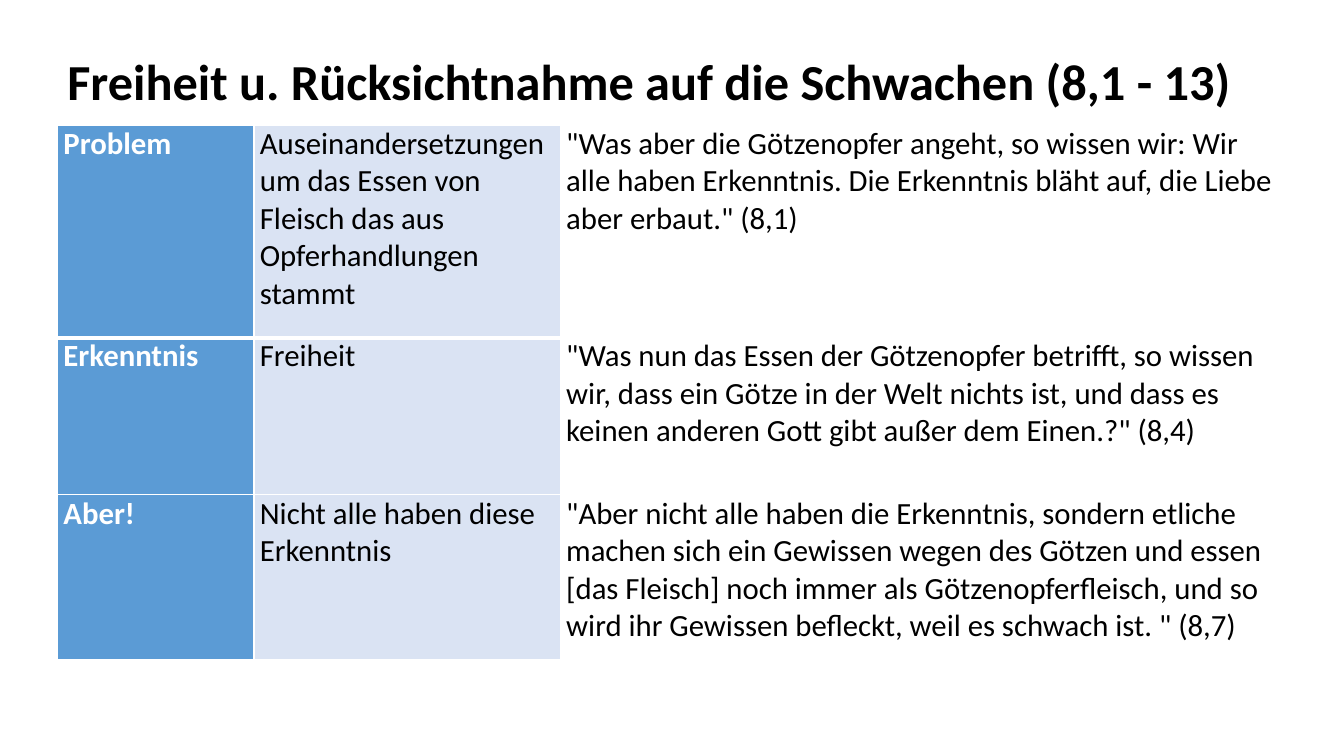
import pptx
import pptx.dml.color
import pptx.enum.text
import pptx.oxml
import pptx.oxml.ns
import pptx.util

Cm = pptx.util.Cm
Pt = pptx.util.Pt


def tint(code):
    return pptx.dml.color.RGBColor.from_string(code)


class Deck:
    font = "Calibri"
    black = "000000"
    white = "FFFFFF"
    blue = "5B9BD5"
    pale = "DAE3F3"

    def __init__(self, show):
        self.slide = show.slides.add_slide(show.slide_layouts[6])

    def label(self, frame, text, size, color, bold):
        run = frame.paragraphs[0].add_run()
        run.text = text
        run.font.name = self.font
        run.font.size = Pt(size)
        run.font.bold = bold
        run.font.color.rgb = tint(color)

    def title(self, text, left, top, width, height):
        box = self.slide.shapes.add_textbox(Cm(left), Cm(top), Cm(width), Cm(height))
        frame = box.text_frame
        frame.word_wrap = False
        frame.auto_size = pptx.enum.text.MSO_AUTO_SIZE.SHAPE_TO_FIT_TEXT
        self.label(frame, text, 36, self.black, True)

    def border(self, cell, side, width):
        line = pptx.oxml.parse_xml(
            f'<a:ln{side} {pptx.oxml.ns.nsdecls("a")} w="{Pt(width)}"><a:solidFill>'
            f'<a:srgbClr val="{self.white}"/></a:solidFill></a:ln{side}>')
        cell._tc.get_or_add_tcPr().append(line)

    def cell(self, cell, text, fill, color, bold, above, below):
        cell.margin_left = cell.margin_right = Cm(0.15)
        cell.margin_top = cell.margin_bottom = 0
        # Borders precede the fill in the cell's XML
        for side, width in zip("LRTB", (1, 1, above, below)):
            self.border(cell, side, width)
        cell.fill.solid()
        cell.fill.fore_color.rgb = tint(fill)
        self.label(cell.text_frame, text, 22, color, bold)

    def table(self, rows, left, top, widths, heights):
        grid = self.slide.shapes.add_table(
            len(rows), len(widths), Cm(left), Cm(top),
            Cm(sum(widths)), Cm(sum(heights))).table
        for col, width in zip(grid.columns, widths):
            col.width = Cm(width)
        for row, height in zip(grid.rows, heights):
            row.height = Cm(height)
        looks = ((self.blue, self.white, True),
                 (self.pale, self.black, False),
                 (self.white, self.black, False))
        for r, texts in enumerate(rows):
            # A thick rule parts the first row from the rest
            above = 3 if r == 1 else 1
            below = 3 if r == 0 else 1
            for c, (text, look) in enumerate(zip(texts, looks)):
                self.cell(grid.cell(r, c), text, *look, above, below)


ROWS = [
    ("Problem",
     "Auseinandersetzungen um das Essen von Fleisch das aus Opferhandlungen stammt",
     '"Was aber die Götzenopfer angeht, so wissen wir: Wir alle haben Erkenntnis. '
     'Die Erkenntnis bläht auf, die Liebe aber erbaut." (8,1)'),
    ("Erkenntnis",
     "Freiheit",
     '"Was nun das Essen der Götzenopfer betrifft, so wissen wir, dass ein Götze in der '
     'Welt nichts ist, und dass es keinen anderen Gott gibt außer dem Einen.?" (8,4)'),
    ("Aber!",
     "Nicht alle haben diese Erkenntnis",
     '"Aber nicht alle haben die Erkenntnis, sondern etliche machen sich ein Gewissen '
     'wegen des Götzen und essen [das Fleisch] noch immer als Götzenopferfleisch, und so '
     'wird ihr Gewissen befleckt, weil es schwach ist. " (8,7)'),
]


def main():
    show = pptx.Presentation()
    show.slide_width = Cm(33.87)
    show.slide_height = Cm(19.05)
    deck = Deck(show)

    # Heading
    deck.title("Freiheit u. Rücksichtnahme auf die Schwachen (8,1 - 13)",
               1.45, 1.14, 30.15, 1.8)

    # Topics, summaries and verses
    deck.table(ROWS, 1.45, 3.15, (4.95, 7.72, 18.36), (5.36, 3.96, 4.14))

    show.save("out.pptx")


if __name__ == "__main__":
    main()
